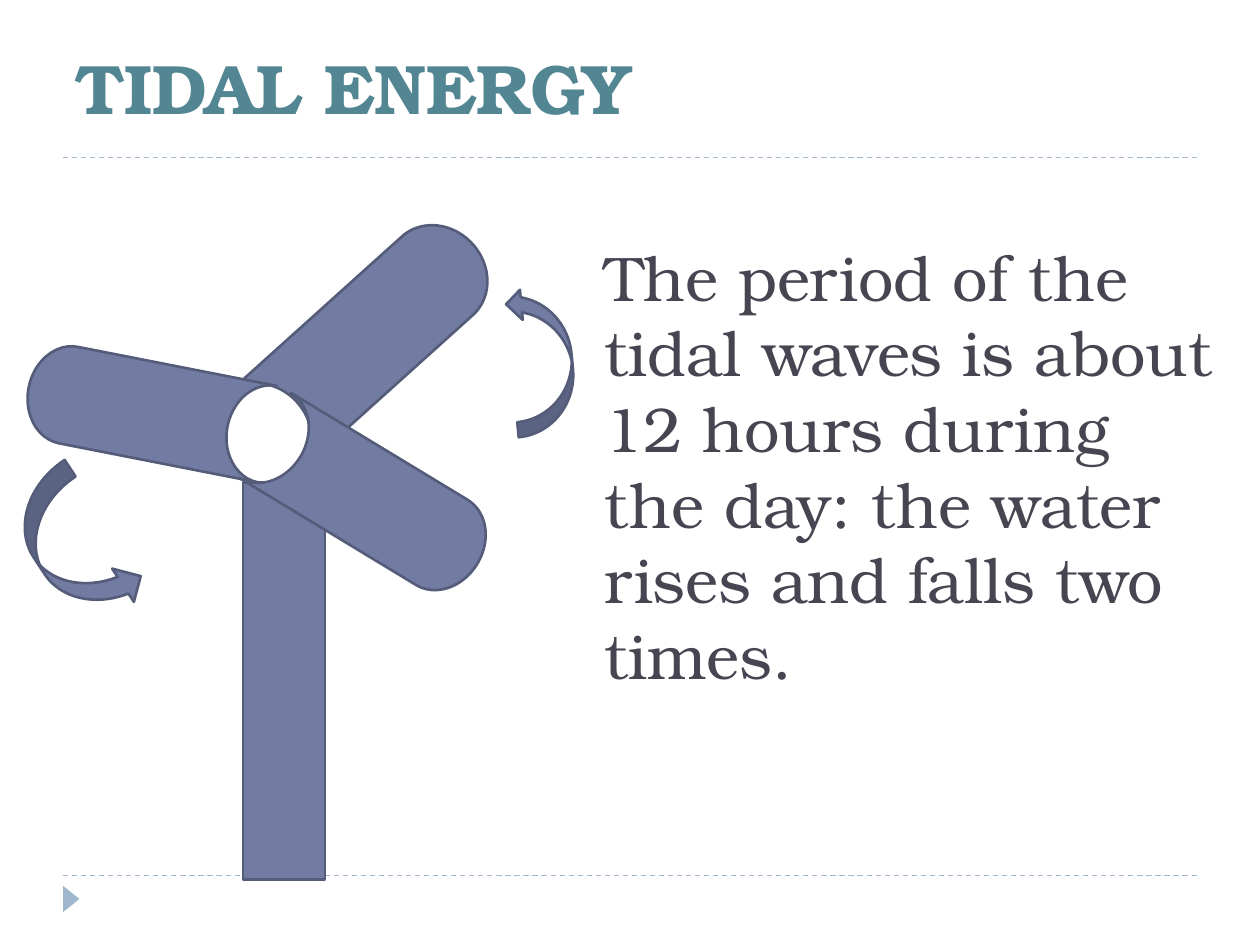
import pptx
import pptx.util
import pptx.dml.color
import pptx.enum.dml
import pptx.enum.shapes
import pptx.enum.text
import pptx.oxml.ns
import lxml.etree

RGBColor = pptx.dml.color.RGBColor
Shape = pptx.enum.shapes.MSO_SHAPE

TEAL = RGBColor(0x52, 0x86, 0x93)
INK = RGBColor(0x46, 0x46, 0x53)
BLUE = RGBColor(0x72, 0x7C, 0xA3)
EDGE = RGBColor(0x54, 0x5C, 0x79)
PALE = RGBColor(0x9F, 0xB8, 0xCD)

COLS, ROWS = 100, 75


class Deck:
    font = "TeX Gyre Bonum"

    def __init__(self):
        self.prs = pptx.Presentation()
        self.prs.slide_width = pptx.util.Inches(10)
        self.prs.slide_height = pptx.util.Inches(7.5)
        self.slide = self.prs.slides.add_slide(self.prs.slide_layouts[6])

    def x(self, col):
        return round(self.prs.slide_width * col / COLS)

    def y(self, row):
        return round(self.prs.slide_height * row / ROWS)

    def box(self, left, top, width, height):
        return self.x(left), self.y(top), self.x(width), self.y(height)

    def rule(self, row):
        line = self.slide.shapes.add_connector(
            pptx.enum.shapes.MSO_CONNECTOR.STRAIGHT,
            self.x(5), self.y(row), self.x(95), self.y(row))
        line.line.color.rgb = PALE
        line.line.width = pptx.util.Pt(0.75)
        line.line.dash_style = pptx.enum.dml.MSO_LINE.DASH
        lxml.etree.SubElement(line._element.spPr, pptx.oxml.ns.qn("a:effectLst"))

    def shape(self, kind, area, turn=0, fill=BLUE, edge=EDGE):
        part = self.slide.shapes.add_shape(kind, *self.box(*area))
        part.rotation = turn
        part.shadow.inherit = False
        part.fill.solid()
        part.fill.fore_color.rgb = fill
        if edge is None:
            part.line.fill.background()
        else:
            part.line.color.rgb = edge
            part.line.width = pptx.util.Pt(1.5)

    def text(self, words, area, size, color, bold=False):
        frame = self.slide.shapes.add_textbox(*self.box(*area)).text_frame
        frame.word_wrap = True
        frame.vertical_anchor = pptx.enum.text.MSO_ANCHOR.BOTTOM
        para = frame.paragraphs[0]
        para.text = words
        para.font.name = self.font
        para.font.size = pptx.util.Pt(size)
        para.font.color.rgb = color
        para.font.bold = bold

    def save(self):
        self.prs.save("out.pptx")


def main():
    deck = Deck()
    for row in (69.5, 12.5):
        deck.rule(row)
    deck.shape(Shape.ISOSCELES_TRIANGLE, (4.6, 70.7, 2.1, 1.3), 90, PALE, None)
    deck.text("TIDAL ENERGY", (5, 2.5, 90, 8.2), 40, TEAL, True)

    arrows = [((2.8, 37.2, 6.3, 12.6), 326.8), ((40.6, 22.7, 4.8, 11.8), 174.6)]
    for area, turn in arrows:
        deck.shape(Shape.CURVED_RIGHT_ARROW, area, turn)

    deck.shape(Shape.RECTANGLE, (19.3, 38.3, 6.5, 31.5))

    blades = [
        ((17.9, 22.7, 22.5, 8.4), 138),
        ((2.1, 28.7, 19.3, 7.8), 11.1),
        ((19.6, 35.7, 19.7, 7.9), 211.2),
    ]
    for area, turn in blades:
        deck.shape(Shape.FLOWCHART_STORED_DATA, area, turn)

    deck.text(
        "The period of the tidal waves is about 12 hours during the day: "
        "the water rises and falls two times.",
        (47, 1.9, 51.4, 53.5), 36, INK)
    deck.save()


if __name__ == "__main__":
    main()
